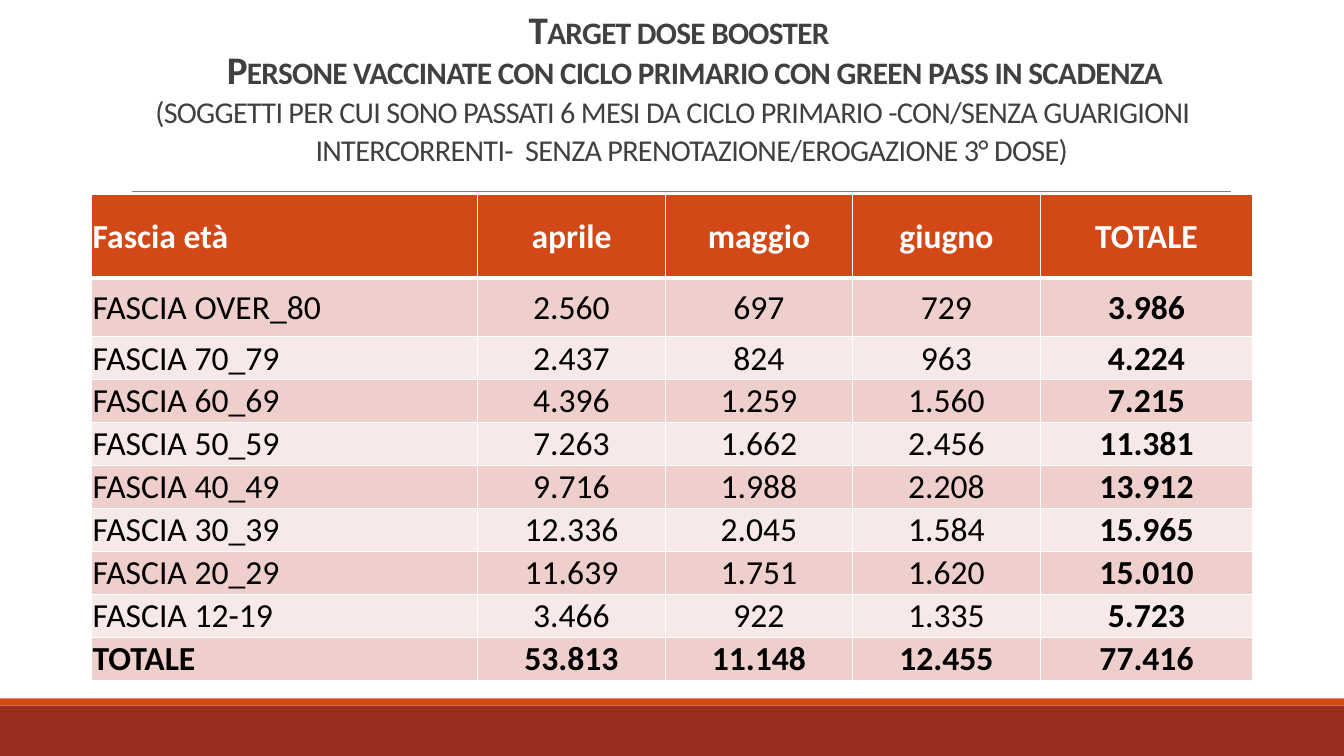
"""Build the booster dose target slide on a grid of tenths of an inch."""
import dataclasses
import typing

import lxml.etree
import pptx
import pptx.dml.color
import pptx.enum.shapes
import pptx.enum.text
import pptx.oxml.ns
import pptx.util

RGBColor = pptx.dml.color.RGBColor
WHITE = RGBColor(0xFF, 0xFF, 0xFF)
BLACK = RGBColor(0x00, 0x00, 0x00)
CHARCOAL = RGBColor(0x40, 0x40, 0x40)
GREY = RGBColor(0x80, 0x80, 0x80)
ORANGE = RGBColor(0xD3, 0x48, 0x17)
BRICK = RGBColor(0x9B, 0x2D, 0x1F)
PINK = RGBColor(0xEF, 0xCF, 0xCC)
PALE_PINK = RGBColor(0xF7, 0xE9, 0xE8)

FONT = "Calibri"
SLIDE_COLUMNS, SLIDE_ROWS = 133.33, 75
COLUMN_WIDTHS = (38.3, 18.6, 18.6, 18.6, 21.1)
ROW_HEIGHTS = (8.3, 5.8) + (4.26,) * 8
TITLE_LINES = (
    "Target dose booster",
    "Persone vaccinate con ciclo primario con green pass in scadenza",
)
SUBTITLE = (
    "(soggetti per cui sono passati 6 mesi da ciclo primario -con/senza "
    "guarigioni intercorrenti-  senza prenotazione/erogazione 3° dose)"
)
DOSES = (
    ("Fascia età", "aprile", "maggio", "giugno", "TOTALE"),
    ("FASCIA OVER_80", "2.560", "697", "729", "3.986"),
    ("FASCIA 70_79", "2.437", "824", "963", "4.224"),
    ("FASCIA 60_69", "4.396", "1.259", "1.560", "7.215"),
    ("FASCIA 50_59", "7.263", "1.662", "2.456", "11.381"),
    ("FASCIA 40_49", "9.716", "1.988", "2.208", "13.912"),
    ("FASCIA 30_39", "12.336", "2.045", "1.584", "15.965"),
    ("FASCIA 20_29", "11.639", "1.751", "1.620", "15.010"),
    ("FASCIA 12-19", "3.466", "922", "1.335", "5.723"),
    ("TOTALE", "53.813", "11.148", "12.455", "77.416"),
)


@dataclasses.dataclass(frozen=True)
class Area:
    """A rectangle in grid columns and rows."""

    column: float
    row: float
    columns: float
    rows: float

    def lengths(self) -> tuple[int, ...]:
        """Return left, top, width and height."""
        return tuple(map(grid, dataclasses.astuple(self)))


@dataclasses.dataclass(frozen=True)
class Band:
    """A filled strip of the footer."""

    area: Area
    color: RGBColor


TITLE_AREA = Area(11.7, 1.4, 110, 15.9)
TABLE_AREA = Area(9.1, 19.3, sum(COLUMN_WIDTHS), sum(ROW_HEIGHTS))
RULE_AREA = Area(13.1, 19, 109, 0)
BANDS = (
    Band(Area(0, 70, SLIDE_COLUMNS, 5), BRICK),
    Band(Area(0, 69.3, SLIDE_COLUMNS, 0.7), ORANGE),
)


def grid(steps: float) -> int:
    """Convert grid steps to a length."""
    return pptx.util.Inches(steps / 10)


def add_text(para: typing.Any, text: str, *, size: float, color: RGBColor,
             bold: bool = False, small_caps: bool = False) -> None:
    """Add a formatted span to a paragraph."""
    span = para.add_run()
    span.text = text
    span.font.name = FONT
    span.font.size = pptx.util.Pt(size)
    span.font.bold = bold
    span.font.color.rgb = color
    if small_caps:
        properties = span._r.get_or_add_rPr()
        properties.set("cap", "small")
        properties.set("spc", "-50")


def add_band(page: typing.Any, band: Band) -> None:
    """Draw one footer strip."""
    box = page.shapes.add_shape(
        pptx.enum.shapes.MSO_SHAPE.RECTANGLE, *band.area.lengths())
    box.shadow.inherit = False
    box.fill.solid()
    box.fill.fore_color.rgb = band.color
    box.line.fill.background()


def add_rule(page: typing.Any, area: Area) -> None:
    """Draw the thin line under the title."""
    left, top, width, height = area.lengths()
    rule = page.shapes.add_connector(
        pptx.enum.shapes.MSO_CONNECTOR.STRAIGHT,
        left, top, left + width, top + height)
    rule.line.color.rgb = GREY
    rule.line.width = pptx.util.Pt(0.5)
    lxml.etree.SubElement(
        rule._element.spPr, pptx.oxml.ns.qn("a:effectLst"))


def fill_title(page: typing.Any, area: Area) -> None:
    """Place and write the title placeholder."""
    title = page.shapes.title
    title.left, title.top, title.width, title.height = area.lengths()
    frame = title.text_frame
    frame.word_wrap = True
    frame.auto_size = pptx.enum.text.MSO_AUTO_SIZE.NONE
    frame.vertical_anchor = pptx.enum.text.MSO_ANCHOR.BOTTOM
    para = frame.paragraphs[0]
    para.alignment = pptx.enum.text.PP_ALIGN.CENTER
    para.line_spacing = 0.85
    for line in TITLE_LINES:
        add_text(para, line, size=27.9, color=CHARCOAL, bold=True,
                 small_caps=True)
        para.add_line_break()
    add_text(para, SUBTITLE, size=27, color=CHARCOAL, small_caps=True)


def add_border(cell: typing.Any, side: str, width: float) -> None:
    """Add a white border on one side of a cell."""
    qn = pptx.oxml.ns.qn
    line = lxml.etree.SubElement(
        cell._tc.get_or_add_tcPr(), qn(f"a:ln{side}"),
        w=str(pptx.util.Pt(width)))
    fill = lxml.etree.SubElement(line, qn("a:solidFill"))
    lxml.etree.SubElement(fill, qn("a:srgbClr"), val=str(WHITE))


def fill_cell(cell: typing.Any, text: str, row: int, column: int) -> None:
    """Format one table cell by its position."""
    header = row == 0
    bold = header or row == len(DOSES) - 1 or column == len(DOSES[0]) - 1
    cell.vertical_anchor = pptx.enum.text.MSO_ANCHOR.MIDDLE
    cell.margin_left = cell.margin_right = cell.margin_top = grid(0.1)
    cell.margin_bottom = 0
    widths = {"L": 1, "R": 1, "T": 3 if row == 1 else 1,
              "B": 3 if header else 1}
    for side, width in widths.items():
        add_border(cell, side, width)
    cell.fill.solid()
    cell.fill.fore_color.rgb = (
        ORANGE if header else PINK if row % 2 else PALE_PINK)
    para = cell.text_frame.paragraphs[0]
    alignments = pptx.enum.text.PP_ALIGN
    para.alignment = alignments.CENTER if column else alignments.LEFT
    add_text(para, text, size=24, color=WHITE if header else BLACK, bold=bold)


def add_doses(page: typing.Any, area: Area) -> None:
    """Draw the table of doses by age group and month."""
    table = page.shapes.add_table(
        len(DOSES), len(DOSES[0]), *area.lengths()).table
    table.horz_banding = False
    for column, width in zip(table.columns, COLUMN_WIDTHS):
        column.width = grid(width)
    for row, height in zip(table.rows, ROW_HEIGHTS):
        row.height = grid(height)
    for row, texts in enumerate(DOSES):
        for column, text in enumerate(texts):
            fill_cell(table.cell(row, column), text, row, column)


def main() -> None:
    """Build and save the deck."""
    deck = pptx.Presentation()
    deck.slide_width, deck.slide_height = grid(SLIDE_COLUMNS), grid(SLIDE_ROWS)
    page = deck.slides.add_slide(deck.slide_layouts[5])
    for band in BANDS:
        add_band(page, band)
    add_rule(page, RULE_AREA)
    fill_title(page, TITLE_AREA)
    add_doses(page, TABLE_AREA)
    deck.save("out.pptx")


if __name__ == "__main__":
    main()
